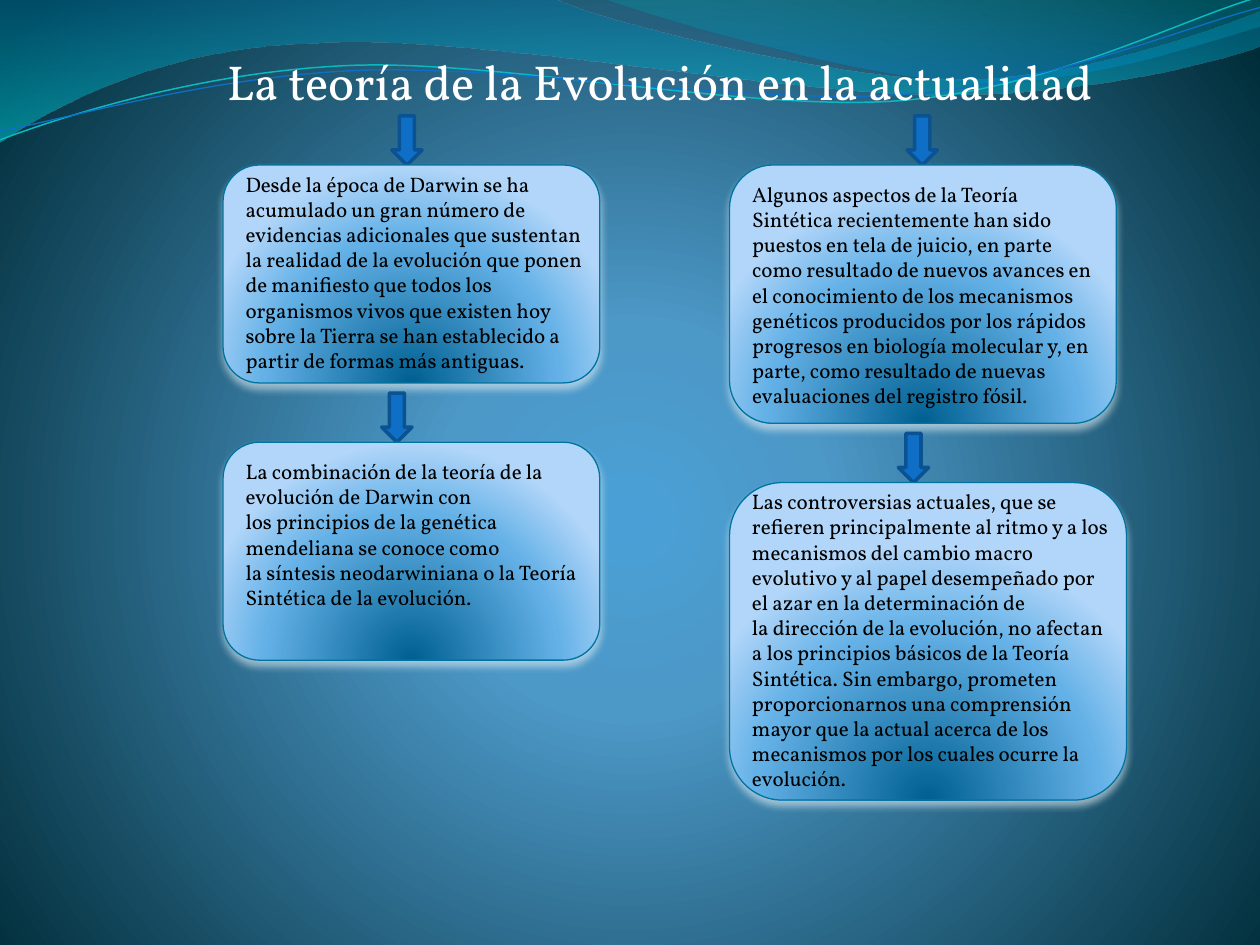
import math
from dataclasses import dataclass

from lxml import etree
from pptx import Presentation
from pptx.dml.color import RGBColor
from pptx.enum import shapes, text
from pptx.oxml import ns
from pptx.util import Inches, Pt


@dataclass(frozen=True)
class Theme:
    font: str = "Vollkorn"
    title_size: int = 28
    body_size: int = 12
    title: str = "FFFFFF"
    body: str = "000000"
    arrow: str = "0F6FC6"
    arrow_line: str = "0B5292"
    card_line: str = "0074A1"
    shadow: str = "E6F0F5"
    background: tuple = ((0, "4AA0D6"), (25, "4C98C7"), (100, "002C38"))
    card: tuple = ((0, "006091"), (68, "64B1E7"), (100, "B1D6F9"))


THEME = Theme()
ARROW_W, ARROW_H = 0.24, 0.39
TEXT_INDENT = 0.08
WAVE_TILT = -2.7
HARD_SPACE = chr(160)  # written as ~ in the card texts

# Each outline is a start point, then line ends (x, y) or Bezier segments
# (control 1, control 2, end).
BANDS = [
    ([(0, 0), (4.4, -0.01), (4.76, 0.17, 6.64, 0.63, 7.58, 0.63),
      (8.53, 0.63, 9.58, 0.26, 10, 0.09), (10.01, 0.36),
      (9.83, 0.44, 8.7, 0.76, 7.46, 0.75), (6.22, 0.75, 3.82, 0.28, 2.57, 0.34),
      (1.29, 0.36, 0.46, 0.83, -0.01, 1.13)],
     ((0, "0074A1", 45), (100, "00C6CF", 55))),
    ([(4.79, -0.01), (5.09, 0.11, 6.82, 0.62, 7.69, 0.65),
      (8.56, 0.69, 9.61, 0.32, 10, 0.21), (10, 0)],
     ((0, "00A1A9", 30), (80, "008BBF", 45))),
]
# Outline as it lies when tilted, centre of the tilt, colour, width
WAVES = [
    ([(0, 1.11), (0.48, 0.93, 1.58, 0.57, 2.77, 0.52),
      (3.95, 0.47, 5.93, 0.89, 7.13, 0.8), (8.33, 0.71, 9.38, 0.15, 9.98, -0.02)],
     (4.99, 0.57), "0AB8BF", 0.85),
    ([(0, 1.04), (0.47, 0.96, 1.64, 0.61, 2.83, 0.56),
      (4.03, 0.51, 5.97, 0.84, 7.17, 0.75), (8.36, 0.67, 9.41, 0.21, 10, 0.06)],
     (5, 0.59), "0F6FC6", 0.75),
]

# Card box, arrow left, text top offset, text width, wording
CARDS = [
    ((1.77, 1.31, 2.99, 1.73), 3.11, 0, 2.91,
     "Desde la época de Darwin se ha acumulado un gran número de evidencias "
     "adicionales que sustentan la realidad de la evolución que ponen de "
     "manifiesto que todos los organismos vivos que existen hoy sobre~la Tierra~"
     "se han establecido a partir de formas más antiguas."),
    ((5.79, 1.31, 3.07, 2.05), 7.2, 0.08, 2.91,
     "Algunos aspectos de la Teoría Sintética recientemente han sido puestos en "
     "tela de juicio, en parte como resultado de nuevos avances en el "
     "conocimiento de los mecanismos genéticos producidos por los rápidos "
     "progresos en biología molecular y, en parte, como resultado de nuevas "
     "evaluaciones del registro fósil."),
    ((1.77, 3.51, 2.99, 1.73), 3.03, 0.08, 2.91,
     "La combinación de la teoría de la evolución de Darwin con los~principios~"
     "de la genética mendeliana se conoce como la~síntesis~neodarwiniana o la "
     "Teoría Sintética de la evolución."),
    ((5.79, 3.83, 3.15, 2.52), 7.13, 0, 3.07,
     "Las controversias actuales, que se refieren principalmente al ritmo y a "
     "los mecanismos del cambio macro evolutivo y al papel desempeñado por el "
     "azar en la determinación de la~dirección~de la evolución, no afectan a los "
     "principios básicos de la Teoría Sintética. Sin embargo, prometen "
     "proporcionarnos una comprensión mayor que la actual acerca de los "
     "mecanismos por los cuales ocurre la evolución."),
]


def inches(values):
    return [Inches(v) for v in values]


def sub(parent, tag, **attrs):
    child = etree.SubElement(parent, ns.qn(tag))
    for name, value in attrs.items():
        child.set(name, str(value))
    return child


def add_color(parent, color, alpha=100):
    clr = sub(parent, "a:srgbClr", val=color)
    if alpha < 100:
        sub(clr, "a:alpha", val=alpha * 1000)


def set_gradient(fill, element, stops, focus=None):
    """Vertical gradient, or a circular one around focus (l, t, r, b in percent)."""
    fill.gradient()
    grad = next(element.iter(ns.qn("a:gradFill")))
    for child in list(grad):
        grad.remove(child)
    gs_list = sub(grad, "a:gsLst")
    for position, *color in stops:
        add_color(sub(gs_list, "a:gs", pos=position * 1000), *color)
    if focus:
        circle = sub(grad, "a:path", path="circle")
        sub(circle, "a:fillToRect", **{k: v * 1000 for k, v in zip("ltrb", focus)})
    else:
        sub(grad, "a:lin", ang=90 * 60000, scaled=0)


def set_line(sp, color, width):
    sp.line.color.rgb = RGBColor.from_string(color)
    sp.line.width = Pt(width)


def pairs(seg):
    return list(zip(seg[::2], seg[1::2]))


def level(outline, center):
    """Turn the points of a tilted outline back to the horizontal."""
    cx, cy = center
    cos, sin = math.cos(math.radians(WAVE_TILT)), math.sin(math.radians(WAVE_TILT))
    return [[v for x, y in pairs(seg)
             for v in (cx + (x - cx) * cos + (y - cy) * sin,
                       cy + (y - cy) * cos - (x - cx) * sin)]
            for seg in outline]


def add_outline(s, outline, close):
    """Freeform through the segment ends, its long segments bent to Bezier curves."""
    start, *ends = [inches(seg[-2:]) for seg in outline]
    builder = s.shapes.build_freeform(*start)
    builder.add_line_segments(ends, close=close)
    sp = builder.convert_to_shape()
    sp.shadow.inherit = False
    lines = list(sp._element.iter(ns.qn("a:lnTo")))
    for seg, line in zip(outline[1:], lines):
        if len(seg) == 6:
            line.tag = ns.qn("a:cubicBezTo")
            line.remove(line[0])
            for x, y in pairs(seg):
                sub(line, "a:pt", x=Inches(x) - sp.left, y=Inches(y) - sp.top)
    return sp


def add_band(s, outline, stops):
    sp = add_outline(s, outline, True)
    set_gradient(sp.fill, sp._element, stops)
    sp.line.fill.background()


def add_wave(s, outline, center, color, width):
    sp = add_outline(s, level(outline, center), False)
    sp.rotation = WAVE_TILT
    sp.fill.background()
    set_line(sp, color, width)


def write(sp, words, size, color, align):
    tf = sp.text_frame
    frame = {"word_wrap": True, "auto_size": text.MSO_AUTO_SIZE.SHAPE_TO_FIT_TEXT,
             "vertical_anchor": text.MSO_ANCHOR.TOP}
    for name, value in frame.items():
        setattr(tf, name, value)
    p = tf.paragraphs[0]
    p.alignment = align
    r = p.add_run()
    r.text = words.replace("~", HARD_SPACE)
    for name, value in {"name": THEME.font, "size": Pt(size)}.items():
        setattr(r.font, name, value)
    r.font.color.rgb = RGBColor.from_string(color)


def add_title(s, words, box):
    sp = s.shapes.title
    for name, value in zip(("left", "top", "width", "height"), inches(box)):
        setattr(sp, name, value)
    write(sp, words, THEME.title_size, THEME.title, text.PP_ALIGN.CENTER)
    s.shapes._spTree.append(sp._element)


def add_arrow(s, left, tip):
    sp = s.shapes.add_shape(shapes.MSO_SHAPE.DOWN_ARROW,
                            *inches((left, tip - ARROW_H, ARROW_W, ARROW_H)))
    sp.shadow.inherit = False
    sp.fill.solid()
    sp.fill.fore_color.rgb = RGBColor.from_string(THEME.arrow)
    set_line(sp, THEME.arrow_line, 2)


def add_card(s, box, text_offset, text_width, words):
    left, top, _, height = box
    sp = s.shapes.add_shape(shapes.MSO_SHAPE.ROUNDED_RECTANGLE, *inches(box))
    set_gradient(sp.fill, sp._element, THEME.card, (50, 130, 50, -30))
    set_line(sp, THEME.card_line, 0.75)
    sp.shadow.inherit = False
    effects = next(sp._element.iter(ns.qn("a:effectLst")))
    shadow = sub(effects, "a:outerShdw", blurRad=Pt(4.5), dist=Pt(3),
                 dir=90 * 60000, rotWithShape=0)
    add_color(shadow, THEME.shadow, 60)
    label = s.shapes.add_textbox(*inches((left + TEXT_INDENT, top + text_offset,
                                          text_width, height - 2 * text_offset)))
    write(label, words, THEME.body_size, THEME.body, text.PP_ALIGN.LEFT)


def main():
    prs = Presentation()
    prs.slide_width, prs.slide_height = inches((10, 7.5))
    s = prs.slides.add_slide(prs.slide_layouts.get_by_name("Title Only"))
    set_gradient(s.background.fill, s._element, THEME.background, (10, 110, 10, 100))
    for band in BANDS:
        add_band(s, *band)
    for wave in WAVES:
        add_wave(s, *wave)
    add_title(s, "La teoría de la Evolución en la actualidad", (1.69, 0.36, 7.09, 0.57))
    for box, arrow_left, *label in CARDS:
        add_arrow(s, arrow_left, box[1])
        add_card(s, box, *label)
    prs.save("out.pptx")


if __name__ == "__main__":
    main()
